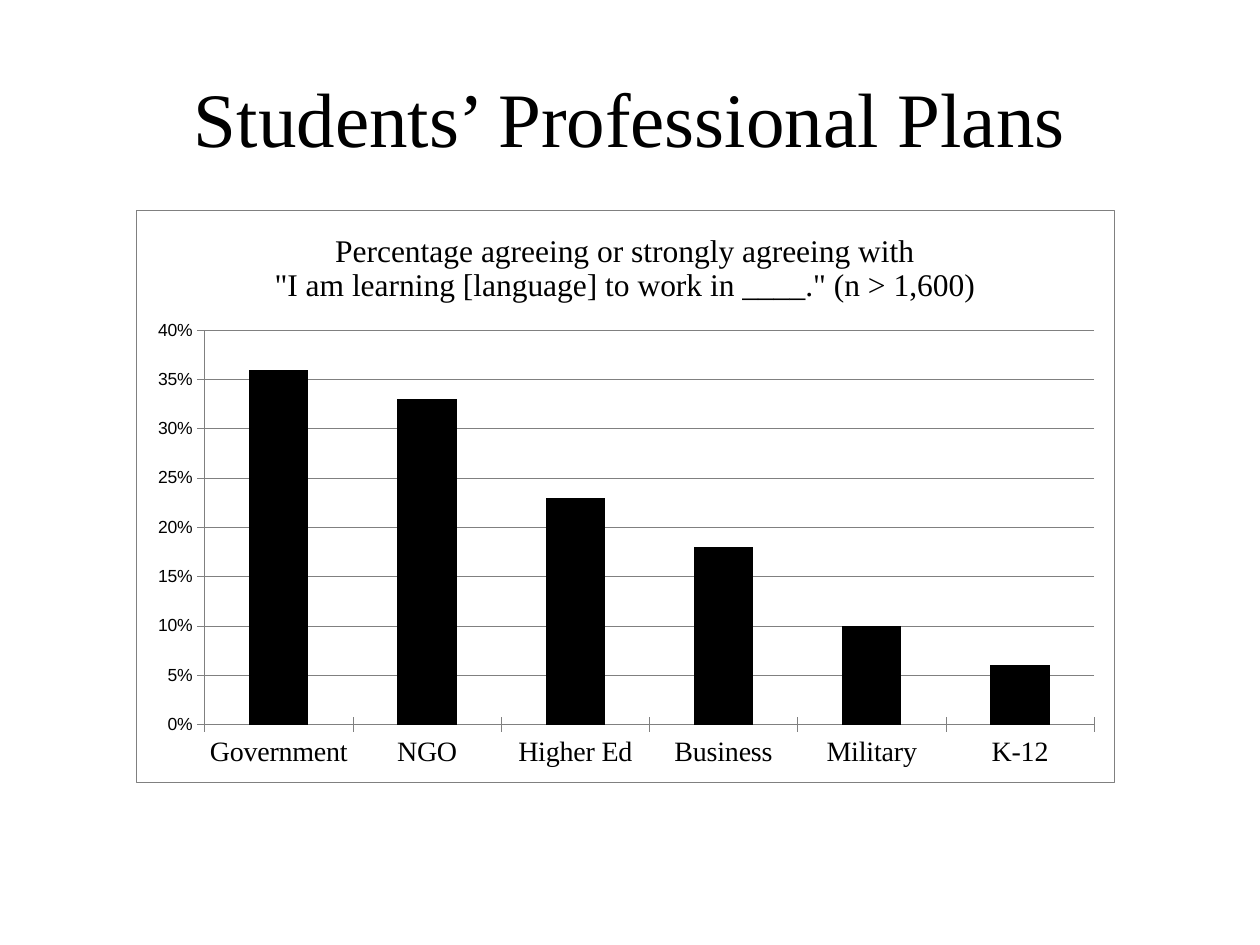
from lxml import etree
from pptx import Presentation
from pptx.chart.data import CategoryChartData
from pptx.dml.color import RGBColor
from pptx.enum.chart import XL_CHART_TYPE as ChartType, XL_TICK_MARK as TickMark
from pptx.enum.text import MSO_ANCHOR as Anchor, PP_ALIGN as Align
from pptx.oxml import parse_xml
from pptx.oxml.ns import nsdecls
from pptx.util import Pt

PX = 914400 / 126
COLORS = {"ink": "000000", "rule": "808080", "paper": "FFFFFF"}
SERIF, SANS = "Times New Roman", "Arial"


def px(*lengths):
    return [round(length * PX) for length in lengths]


def style_font(font, face, size):
    font.name, font.size, font.bold = face, Pt(size), False
    font.color.rgb = RGBColor.from_string(COLORS["ink"])


prs = Presentation()
prs.slide_width, prs.slide_height = px(1260, 945)
slide = prs.slides.add_slide(prs.slide_layouts[5])

# Slide title
title = slide.shapes.title
title.left, title.top, title.width, title.height = px(63, 38, 1134, 158)
title.text_frame.text = "Students’ Professional Plans"
title.text_frame.vertical_anchor = Anchor.MIDDLE
heading = title.text_frame.paragraphs[0]
heading.alignment = Align.CENTER
style_font(heading.font, SERIF, 44)

# Column chart of career plans
plans = CategoryChartData(number_format="0%")
plans.categories = ["Government", "NGO", "Higher Ed", "Business", "Military", "K-12"]
plans.add_series("Series 1", [0.36, 0.33, 0.23, 0.18, 0.1, 0.06])
chart = slide.shapes.add_chart(
    ChartType.COLUMN_CLUSTERED, *px(136, 210, 978, 572), plans).chart
style_font(chart.font, SANS, 10)
chart.has_legend = False

# Chart heading
chart.has_title = True
question = chart.chart_title.text_frame
question.text = ("Percentage agreeing or strongly agreeing with\n"
                 "\"I am learning [language] to work in ____.\" (n > 1,600)")
for line in question.paragraphs:
    style_font(line.font, SERIF, 18)
chart.chart_title.include_in_layout = False

# Bars
columns = chart.plots[0]
columns.gap_width = 150
columns.vary_by_categories = False
bars = columns.series[0]
bars.format.fill.solid()
bars.format.fill.fore_color.rgb = RGBColor.from_string(COLORS["ink"])

# Axes and gridlines
sectors, share = chart.category_axis, chart.value_axis
style_font(sectors.tick_labels.font, SERIF, 16)
style_font(share.tick_labels.font, SANS, 10)
share.minimum_scale, share.maximum_scale, share.major_unit = 0, 0.4, 0.05
share.tick_labels.number_format = "0%"
share.tick_labels.number_format_is_linked = False
share.has_major_gridlines = True
for axis in (sectors, share):
    axis.major_tick_mark = TickMark.CROSS
for ruled in (sectors, share, share.major_gridlines):
    ruled.format.line.color.rgb = RGBColor.from_string(COLORS["rule"])
    ruled.format.line.width = Pt(0.25)

# Plot area position inside the chart
plot_area = chart.element.chart.plotArea
for old_layout in plot_area.findall("{*}layout"):
    plot_area.remove(old_layout)
layout = parse_xml(f'<c:layout {nsdecls("c")}><c:manualLayout/></c:layout>')
settings = {"layoutTarget": "inner", "xMode": "edge", "yMode": "edge",
            "x": 0.07, "y": 0.21, "w": 0.91, "h": 0.69}
for tag, value in settings.items():
    namespace = layout.nsmap["c"]
    etree.SubElement(layout[0], f"{{{namespace}}}{tag}").set("val", str(value))
plot_area.insert(0, layout)

# Chart frame
chart.element.chart.addnext(parse_xml(
    f'<c:spPr {nsdecls("c", "a")}>'
    f'<a:solidFill><a:srgbClr val="{COLORS["paper"]}"/></a:solidFill>'
    f'<a:ln w="{Pt(0.25)}"><a:solidFill><a:srgbClr val="{COLORS["rule"]}"/>'
    '</a:solidFill></a:ln></c:spPr>'))

prs.save("out.pptx")
